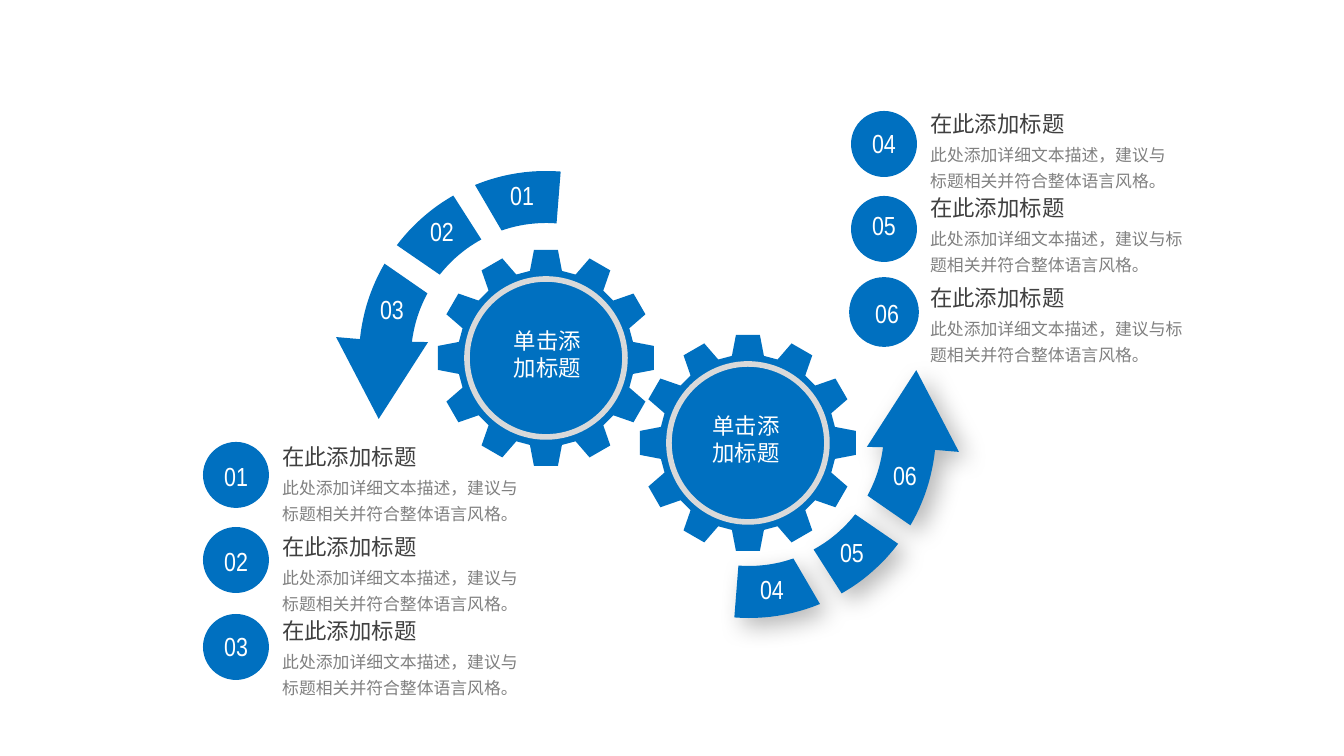
import math

import pptx
import pptx.dml.color
import pptx.enum.shapes
import pptx.enum.text
import pptx.oxml
import pptx.oxml.ns
import pptx.util

EMU_PER_PX = 914400 / 134.4
BLUE, RING, WHITE, DARK, GREY = "0070C0", "D9D9D9", "FFFFFF", "404040", "808080"
NUMBER_FONT, TEXT_FONT = "Arial Narrow", "Noto Sans CJK SC"
HEADING = "在此添加标题"
DESCRIPTION = "此处添加详细文本描述，建议与标题相关并符合整体语言风格。"
SHADOW_XML = (
    "<a:effectLst %s><a:outerShdw blurRad='165100' dist='76200' dir='2700000' algn='tl' "
    "rotWithShape='0'><a:srgbClr val='000000'><a:alpha val='28000'/></a:srgbClr>"
    "</a:outerShdw></a:effectLst>" % pptx.oxml.ns.nsdecls("a")
)


def px(length):
    return pptx.util.Emu(round(length * EMU_PER_PX))


def color(hex_string):
    return pptx.dml.color.RGBColor.from_string(hex_string)


def polar(center, radius, degrees):
    """Point at an angle counted counterclockwise from the right."""
    angle = math.radians(degrees)
    return center[0] + radius * math.cos(angle), center[1] - radius * math.sin(angle)


def arc(center, radius, start, end, steps=12):
    return [polar(center, radius, start + (end - start) * i / steps) for i in range(steps + 1)]


class Diagram:
    def __init__(self, slide):
        self.slide = slide

    def paint(self, shape, line=None, line_width=0):
        shape.shadow.inherit = False
        shape.fill.solid()
        shape.fill.fore_color.rgb = color(BLUE)
        if line:
            shape.line.color.rgb = color(line)
            shape.line.width = pptx.util.Pt(line_width)
        else:
            shape.line.fill.background()

    def circle(self, left, top, size, line=None, line_width=0):
        shape = self.slide.shapes.add_shape(
            pptx.enum.shapes.MSO_SHAPE.OVAL, px(left), px(top), px(size), px(size))
        self.paint(shape, line, line_width)

    def outline(self, contours):
        builder = None
        for contour in contours:
            points = [(px(x), px(y)) for x, y in contour]
            if builder is None:
                builder = self.slide.shapes.build_freeform(*points[0])
            else:
                builder.move_to(*points[0])
            builder.add_line_segments(points[1:], close=True)
        shape = builder.convert_to_shape()
        self.paint(shape)
        return shape

    def text(self, words, left, top, width, height, size, font, hex_color,
             centered=False, spacing=None):
        box = self.slide.shapes.add_textbox(px(left), px(top), px(width), px(height))
        frame = box.text_frame
        frame.word_wrap = True
        frame.auto_size = pptx.enum.text.MSO_AUTO_SIZE.SHAPE_TO_FIT_TEXT
        paragraph = frame.paragraphs[0]
        if centered:
            paragraph.alignment = pptx.enum.text.PP_ALIGN.CENTER
        if spacing:
            paragraph.line_spacing = spacing
        run = paragraph.add_run()
        run.text = words
        run.font.size = pptx.util.Pt(size)
        run.font.name = font
        run.font.color.rgb = color(hex_color)
        # East Asian typeface
        east_asian = pptx.oxml.parse_xml(
            "<a:ea %s typeface='%s'/>" % (pptx.oxml.ns.nsdecls("a"), font))
        run.font._element.find(pptx.oxml.ns.qn("a:latin")).addnext(east_asian)

    def number(self, words, left, top):
        self.text(words, left, top, 110, 46, 14, NUMBER_FONT, WHITE, centered=True)

    def gear(self, x, y, label_left, label_width):
        teeth = []
        for tooth in range(12):
            angle = math.radians(30 * tooth)
            for across, out in ((-16, 87), (-12, 108), (12, 108), (16, 87)):
                teeth.append((x + across * math.cos(angle) + out * math.sin(angle),
                              y + across * math.sin(angle) - out * math.cos(angle)))
        self.outline([teeth])
        self.circle(x - 79, y - 79, 158, RING, 3)
        self.circle(x - 70, y - 70, 140)
        self.text("单击添加标题", label_left, y - 37, label_width, 67, 12, TEXT_FONT, WHITE,
                  centered=True)

    def curved_arrow(self, center, turn=0, shadow=False):
        def band(outer_start, outer_end, inner_start, inner_end, head=()):
            return (arc(center, 187, outer_start + turn, outer_end + turn)
                    + [polar(center, radius, angle + turn) for radius, angle in head]
                    + arc(center, 135, inner_end + turn, inner_start + turn))

        head = ((211, 174.3), (178, 200), (119, 172.3))
        shape = self.outline([
            band(85.5, 112.3, 85.5, 109.2),
            band(119.7, 142.9, 118.6, 141.9),
            band(149.7, 174.2, 151.4, 173.1, head),
        ])
        if shadow:
            properties = shape._element.spPr
            properties.remove(properties.find(pptx.oxml.ns.qn("a:effectLst")))
            properties.append(pptx.oxml.parse_xml(SHADOW_XML))

    def item(self, label, left, circle_top, number_left, number_top, text_top, width, line=None):
        self.circle(left, circle_top, 66, line, 2)
        self.number(label, number_left, number_top)
        self.text(HEADING, left + 66, text_top, 245, 40, 12, TEXT_FONT, DARK)
        self.text(DESCRIPTION, left + 66, text_top + 28, width, 66, 9, TEXT_FONT, GREY,
                  spacing=1.3)


def main():
    presentation = pptx.Presentation()
    presentation.slide_width, presentation.slide_height = px(1344), px(756)
    diagram = Diagram(presentation.slides.add_slide(presentation.slide_layouts[6]))

    # Gears and the arrows around them
    diagram.gear(546, 358, 497, 101)
    diagram.curved_arrow((546, 358))
    diagram.curved_arrow((749, 431), turn=180, shadow=True)
    diagram.gear(748, 443, 693, 106)

    # Numbers on the arrows
    for label, left, top in (("01", 467, 173), ("02", 387, 209), ("03", 337, 287),
                             ("04", 717, 567), ("05", 797, 530), ("06", 850, 453)):
        diagram.number(label, left, top)

    # Numbered descriptions, left and right
    for entry in (("01", 203, 442, 181, 454, 437, 275),
                  ("02", 203, 527, 181, 539, 527, 275),
                  ("03", 203, 614, 181, 624, 611, 275),
                  ("04", 851, 111, 829, 121, 104, 275),
                  ("05", 851, 196, 829, 203, 188, 280),
                  ("06", 851, 279, 832, 291, 278, 280, BLUE)):
        diagram.item(*entry)

    presentation.save("out.pptx")


if __name__ == "__main__":
    main()
